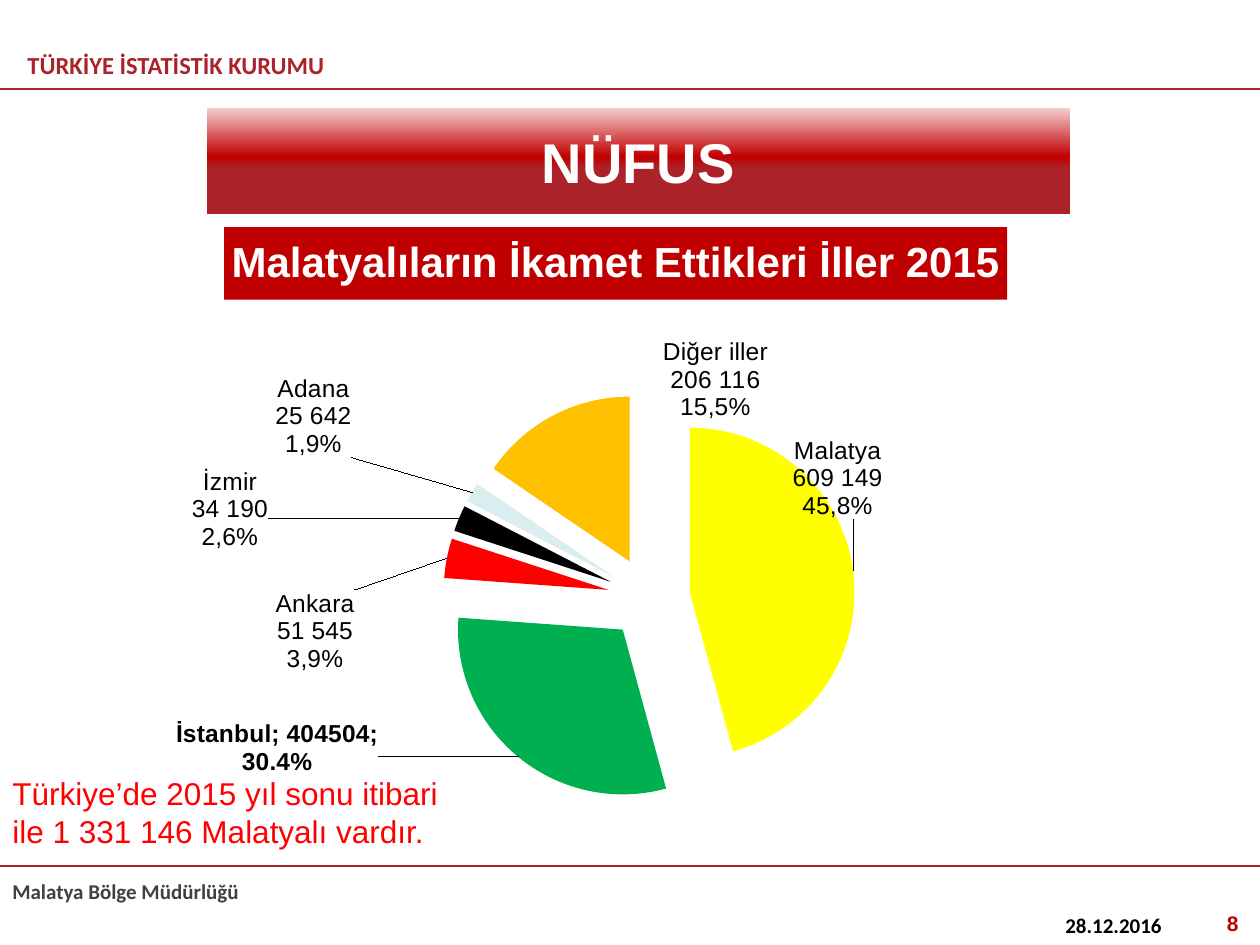
from lxml.etree import SubElement
from pptx import Presentation
from pptx.chart.data import CategoryChartData
from pptx.dml.color import RGBColor
from pptx.enum.chart import XL_CHART_TYPE, XL_LABEL_POSITION
from pptx.enum.shapes import MSO_CONNECTOR
from pptx.enum.text import MSO_ANCHOR, PP_ALIGN
from pptx.oxml import parse_xml
from pptx.oxml.ns import nsdecls, qn
from pptx.util import Emu, Pt

PAGE = (1260, 945)
BRAND = "AB2328"
DEEP_RED = "C00000"

BANNER = ("NÜFUS", (207, 108, 863, 106))
GRADIENT = [(0, "F5CDCE"), (46, DEEP_RED), (57, BRAND), (100, BRAND)]
RULES = [89, 866]
# text, place, anchor, alignment, font
TEXTS = [
    ("TÜRKİYE İSTATİSTİK KURUMU", (15, 45, 446, 40), MSO_ANCHOR.MIDDLE, PP_ALIGN.LEFT,
     dict(name="Calibri", size=14, bold=True, color=BRAND)),
    ("Malatya Bölge Müdürlüğü", (0, 872, 541, 40), MSO_ANCHOR.TOP, PP_ALIGN.LEFT,
     dict(name="Calibri", size=12, bold=True, color="404040")),
    ("28.12.2016", (1053, 906, 150, 38), MSO_ANCHOR.TOP, PP_ALIGN.LEFT,
     dict(name="Calibri", size=12, bold=True, color="000000")),
    ("8", (1100, 904, 151, 38), MSO_ANCHOR.TOP, PP_ALIGN.RIGHT,
     dict(name="Arial", size=12, bold=True, color=DEEP_RED)),
    ("Türkiye’de 2015 yıl sonu itibari ile 1 331 146 Malatyalı vardır.",
     (0, 768, 462, 89), MSO_ANCHOR.TOP, PP_ALIGN.LEFT,
     dict(name="Arial", size=18, bold=False, color="FF0000")),
]

CHART_TITLE = "Malatyalıların İkamet Ettikleri İller 2015"
CHART_PLACE = (0, 207, 1231, 650)
TITLE_CORNER = (224, 20)
PLOT_PLACE = (443, 185, 412, 412)
# city, people, colour, label lines (None: automatic), label shift
CITIES = [
    ("Malatya", 609149, "FFFF00", ["609 149", "45,8%"], (-68, -50)),
    ("İstanbul", 404504, "00B050", None, (-135, -42)),
    ("Ankara", 51545, "FF0000", ["51 545", "3,9%"], (-85, 116)),
    ("İzmir", 34190, "000000", ["34 190", "2,6%"], (-184, 35)),
    ("Adana", 25642, "DAEDEF", ["25 642", "1,9%"], (-114, -31)),
    ("Diğer iller", 206116, "FFC000", ["206 116", "15,5%"], (219, 12)),
]


def px(*lengths):
    return [Emu(round(length * 914400 / 126)) for length in lengths]


def rgb(value):
    return RGBColor.from_string(value)


def set_font(font, color, size, **values):
    font.color.rgb = rgb(color)
    font.size = Pt(size)
    for name, value in values.items():
        setattr(font, name, value)


def write(frame, text, anchor, align, font):
    frame.word_wrap = True
    frame.vertical_anchor = anchor
    para = frame.paragraphs[0]
    para.alignment = align
    span = para.add_run()
    span.text = text
    set_font(span.font, **font)


def add_banner(page):
    text, place = BANNER
    title = page.shapes.title
    title.left, title.top, title.width, title.height = px(*place)
    stops = "".join(f'<a:gs pos="{at * 1000}"><a:srgbClr val="{color}"/></a:gs>'
                    for at, color in GRADIENT)
    title.fill.gradient()
    old = title.fill._xPr.find(qn("a:gradFill"))
    old.getparent().replace(old, parse_xml(
        f'<a:gradFill {nsdecls("a")} rotWithShape="1"><a:gsLst>{stops}</a:gsLst>'
        '<a:lin ang="5400000" scaled="0"/></a:gradFill>'))
    write(title.text_frame, text, MSO_ANCHOR.MIDDLE, PP_ALIGN.CENTER,
          dict(name="Arial", size=32, bold=True, color="FFFFFF"))


def add_rule(page, y):
    rule = page.shapes.add_connector(MSO_CONNECTOR.STRAIGHT, *px(0, y, PAGE[0], y))
    rule.line.color.rgb = rgb(BRAND)
    rule.line.width = Pt(1.5)
    SubElement(rule._element.spPr, qn("a:effectLst"))


def chart_layout(x, y, width=None, height=None, absolute=True):
    """Manual layout element, as shares of the chart's size."""
    across, down = CHART_PLACE[2:]
    parts = []
    if width:
        parts.append('<c:layoutTarget val="inner"/>')
    if absolute:
        parts.append('<c:xMode val="edge"/><c:yMode val="edge"/>')
    parts.append(f'<c:x val="{x / across:.4f}"/><c:y val="{y / down:.4f}"/>')
    if width:
        parts.append(f'<c:w val="{width / across:.4f}"/><c:h val="{height / down:.4f}"/>')
    return parse_xml(f'<c:layout {nsdecls("c")}><c:manualLayout>{"".join(parts)}'
                     '</c:manualLayout></c:layout>')


def replace_layout(parent, layout, index):
    for old in parent.findall(qn("c:layout")):
        parent.remove(old)
    parent.insert(index, layout)


def label_point(point, index, city, lines, shift):
    label = point.data_label
    if lines:
        frame = label.text_frame
        frame.text = "\n".join([city, *lines])
        for para in frame.paragraphs:
            set_font(para.font, "000000", 14, name="Arial", bold=False)
    else:
        set_font(label.font, "000000", 14, name="Arial", bold=True)
    label.position = XL_LABEL_POSITION.OUTSIDE_END
    element = next(item for item in point._ser.iter(qn("c:dLbl"))
                   if item.find(qn("c:idx")).get("val") == str(index))
    for shown in ("c:showVal", "c:showCatName", "c:showPercent"):
        element.find(qn(shown)).set("val", "1")
    element.insert(1, chart_layout(*shift, absolute=False))
    if not lines:
        element.insert(2, parse_xml(
            f'<c:numFmt {nsdecls("c")} formatCode="0.0%" sourceLinked="0"/>'))
        SubElement(element, qn("c:separator")).text = "; "


def add_pie(page):
    data = CategoryChartData()
    data.categories = [city[0] for city in CITIES]
    data.add_series("Series 1", [city[1] for city in CITIES])
    chart = page.shapes.add_chart(XL_CHART_TYPE.PIE, *px(*CHART_PLACE), data).chart
    set_font(chart.font, "000000", 10, name="Arial")
    chart.has_legend = False

    title = chart.chart_title
    title.text_frame.text = CHART_TITLE
    set_font(title.text_frame.paragraphs[0].runs[0].font, "FFFFFF", 24,
             name="Arial", bold=True)
    title.format.fill.solid()
    title.format.fill.fore_color.rgb = rgb(DEEP_RED)
    replace_layout(title._element, chart_layout(*TITLE_CORNER), 1)

    plot = chart.plots[0]
    plot.vary_by_categories = True
    replace_layout(plot._element.getparent(), chart_layout(*PLOT_PLACE), 0)

    series = plot.series[0]
    labels = series.data_labels
    set_font(labels.font, "000000", 14, name="Arial", bold=True)
    labels.show_value = labels.show_category_name = labels.show_percentage = True
    for index, (city, _, color, lines, shift) in enumerate(CITIES):
        point = series.points[index]
        point.format.fill.solid()
        point.format.fill.fore_color.rgb = rgb(color)
        label_point(point, index, city, lines, shift)
    group = labels._element
    for old in group.findall(qn("c:showLeaderLines")):
        group.remove(old)
    SubElement(group, qn("c:showLeaderLines")).set("val", "1")
    first = series._element.find(qn("c:dPt"))
    first.addprevious(parse_xml(f'<c:explosion {nsdecls("c")} val="25"/>'))
    for slice_element in series._element.findall(qn("c:dPt")):
        slice_element.find(qn("c:spPr")).addprevious(
            parse_xml(f'<c:explosion {nsdecls("c")} val="25"/>'))


def main():
    deck = Presentation()
    deck.slide_width, deck.slide_height = px(*PAGE)
    page = deck.slides.add_slide(deck.slide_layouts[5])
    for y in RULES:
        add_rule(page, y)
    add_banner(page)
    add_pie(page)
    for text, place, anchor, align, font in TEXTS:
        box = page.shapes.add_textbox(*px(*place))
        write(box.text_frame, text, anchor, align, font)
    deck.save("out.pptx")


if __name__ == "__main__":
    main()
